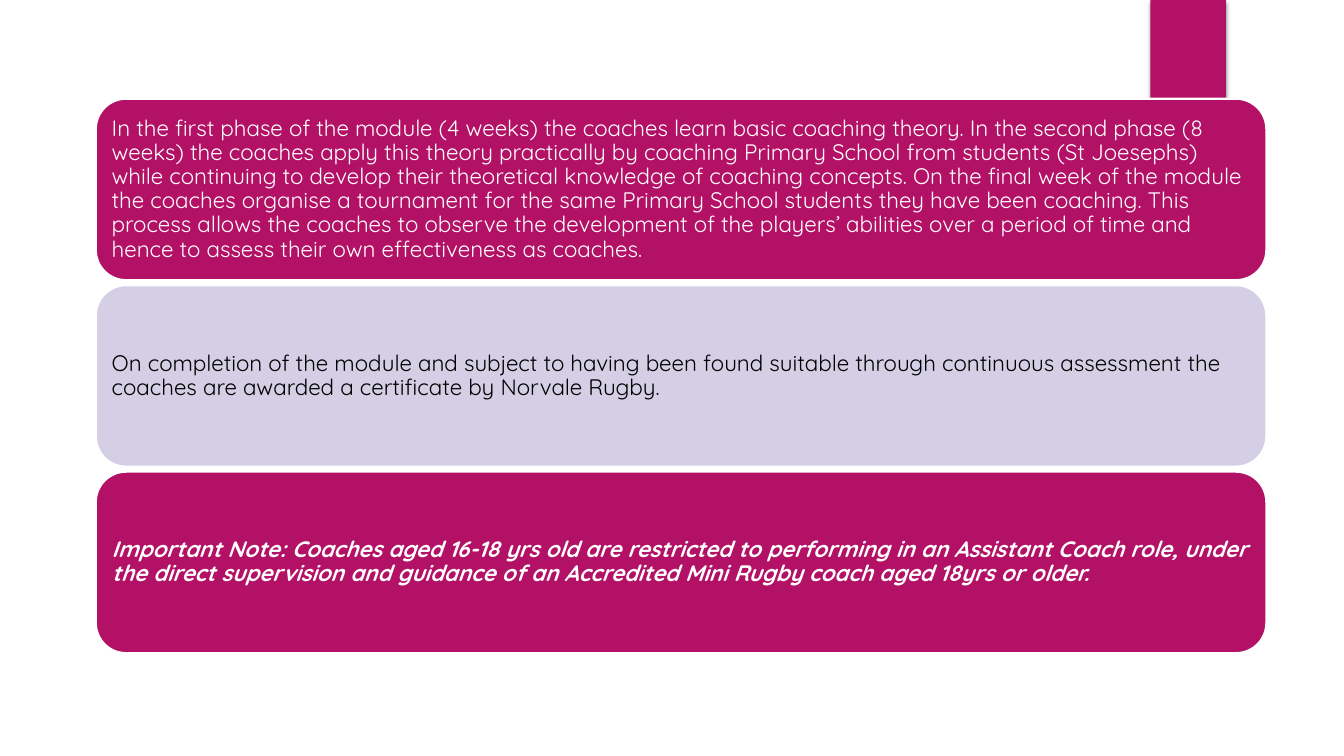
from dataclasses import dataclass

from lxml import etree
from pptx import Presentation
from pptx.dml.color import RGBColor
from pptx.enum import shapes, text
from pptx.oxml import ns
from pptx.util import Inches, Pt


@dataclass(frozen=True)
class Theme:
    magenta: str = "B31166"
    lavender: str = "D5CFE5"
    white: str = "FFFFFF"
    black: str = "000000"
    font: str = "Quicksand"
    body_size: int = 16


THEME = Theme()

PANELS = [
    ("In the first phase of the module (4 weeks) the coaches learn basic coaching theory. "
     "In the second phase (8 weeks) the coaches apply this theory practically by coaching "
     "Primary School from students (St Joesephs) while continuing to develop their "
     "theoretical knowledge of coaching concepts. On the final week of the module the "
     "coaches organise a tournament for the same Primary School students they have been "
     "coaching. This process allows the coaches to observe the development of the players’ "
     "abilities over a period of time and hence to assess their own effectiveness as coaches.",
     THEME.magenta, THEME.white, False),
    ("On completion of the module and subject to having been found suitable through "
     "continuous assessment the coaches are awarded a certificate by Norvale Rugby.",
     THEME.lavender, THEME.black, False),
    ("Important Note: Coaches aged 16-18 yrs old are restricted to performing in an "
     "Assistant Coach role, under the direct supervision and guidance of an Accredited "
     "Mini Rugby coach aged 18yrs or older.",
     THEME.magenta, THEME.white, True),
]


def add_block(page, kind, left, top, width, height, fill):
    block = page.shapes.add_shape(
        kind, Inches(left), Inches(top), Inches(width), Inches(height))
    block.shadow.inherit = False
    block.fill.solid()
    block.fill.fore_color.rgb = RGBColor.from_string(fill)
    block.line.fill.background()
    return block


def add_soft_shadow(block, color, opacity, blur, distance):
    effects = block._element.spPr.find(ns.qn("a:effectLst"))
    shadow = etree.SubElement(
        effects, ns.qn("a:outerShdw"), blurRad=str(Pt(blur)), dist=str(Pt(distance)),
        dir=str(90 * 60000), rotWithShape="0")
    tint = etree.SubElement(shadow, ns.qn("a:srgbClr"), val=color)
    etree.SubElement(tint, ns.qn("a:alpha"), val=str(opacity * 1000))


def write_text(box, words, *, color, emphasis=False):
    frame = box.text_frame
    frame.word_wrap = True
    frame.vertical_anchor = text.MSO_ANCHOR.MIDDLE
    frame.margin_left = frame.margin_right = Inches(0.07)
    frame.margin_top = frame.margin_bottom = Inches(0.07)
    para = frame.paragraphs[0]
    para.alignment = text.PP_ALIGN.LEFT
    para.line_spacing = 0.9
    span = para.add_run()
    span.text = words
    span.font.name = THEME.font
    span.font.size = Pt(THEME.body_size)
    span.font.color.rgb = RGBColor.from_string(color)
    span.font.bold = span.font.italic = emphasis


def add_panel(page, top, words, fill, color, emphasis):
    panel = add_block(page, shapes.MSO_SHAPE.ROUNDED_RECTANGLE, 0.95, top, 11.61, 1.8, fill)
    panel.line.color.rgb = RGBColor.from_string(THEME.white)
    panel.line.width = Pt(1.5)
    write_text(panel, words, color=color, emphasis=emphasis)


def main():
    deck = Presentation()
    deck.slide_width, deck.slide_height = Inches(13.33), Inches(7.5)
    page = deck.slides.add_slide(deck.slide_layouts[6])
    tab = add_block(page, shapes.MSO_SHAPE.RECTANGLE, 11.41, 0, 0.75, 1.25, THEME.magenta)
    add_soft_shadow(tab, THEME.black, opacity=45, blur=3, distance=2)
    for index, panel in enumerate(PANELS):
        add_panel(page, 0.98 + index * 1.85, *panel)
    deck.save("out.pptx")


if __name__ == "__main__":
    main()
